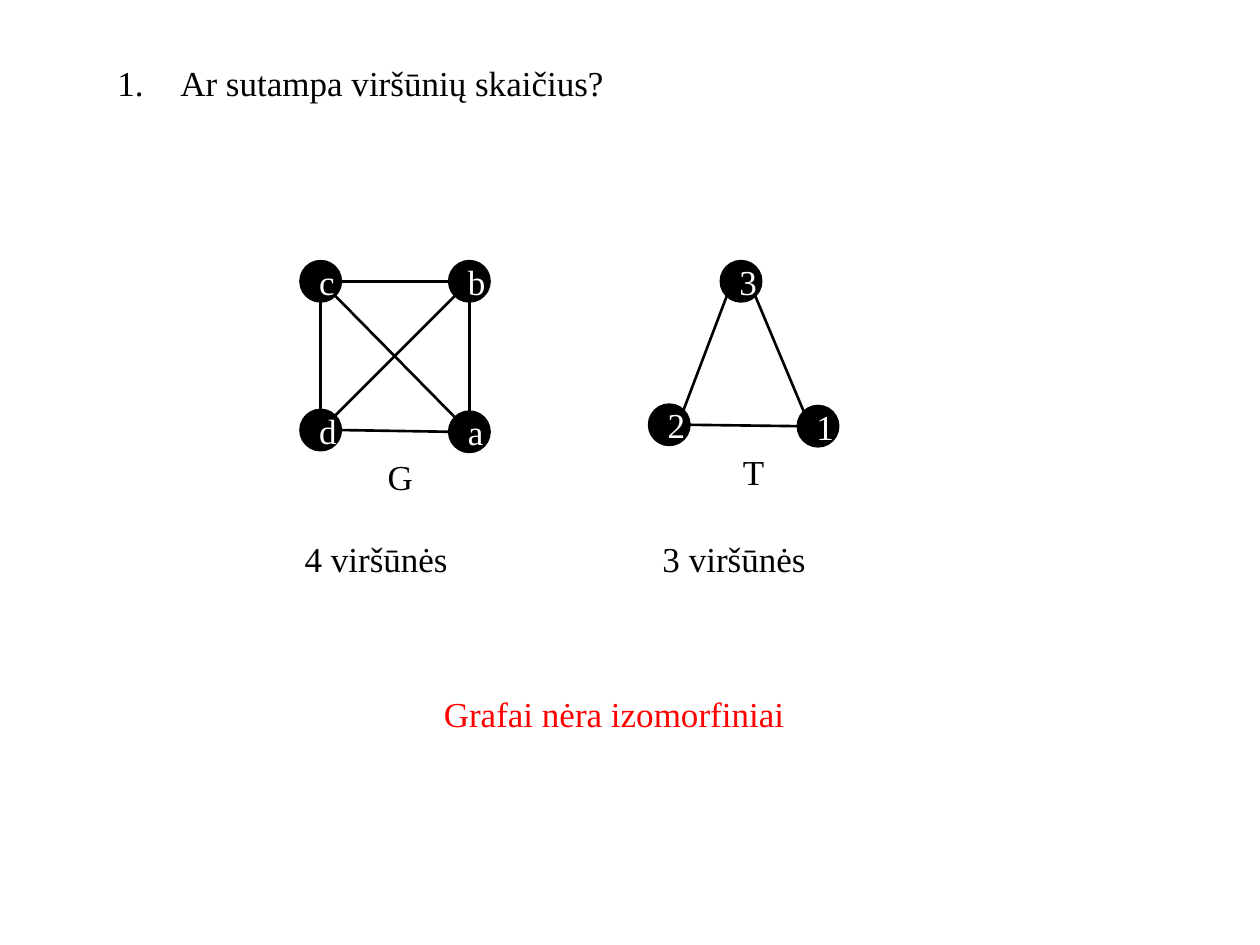
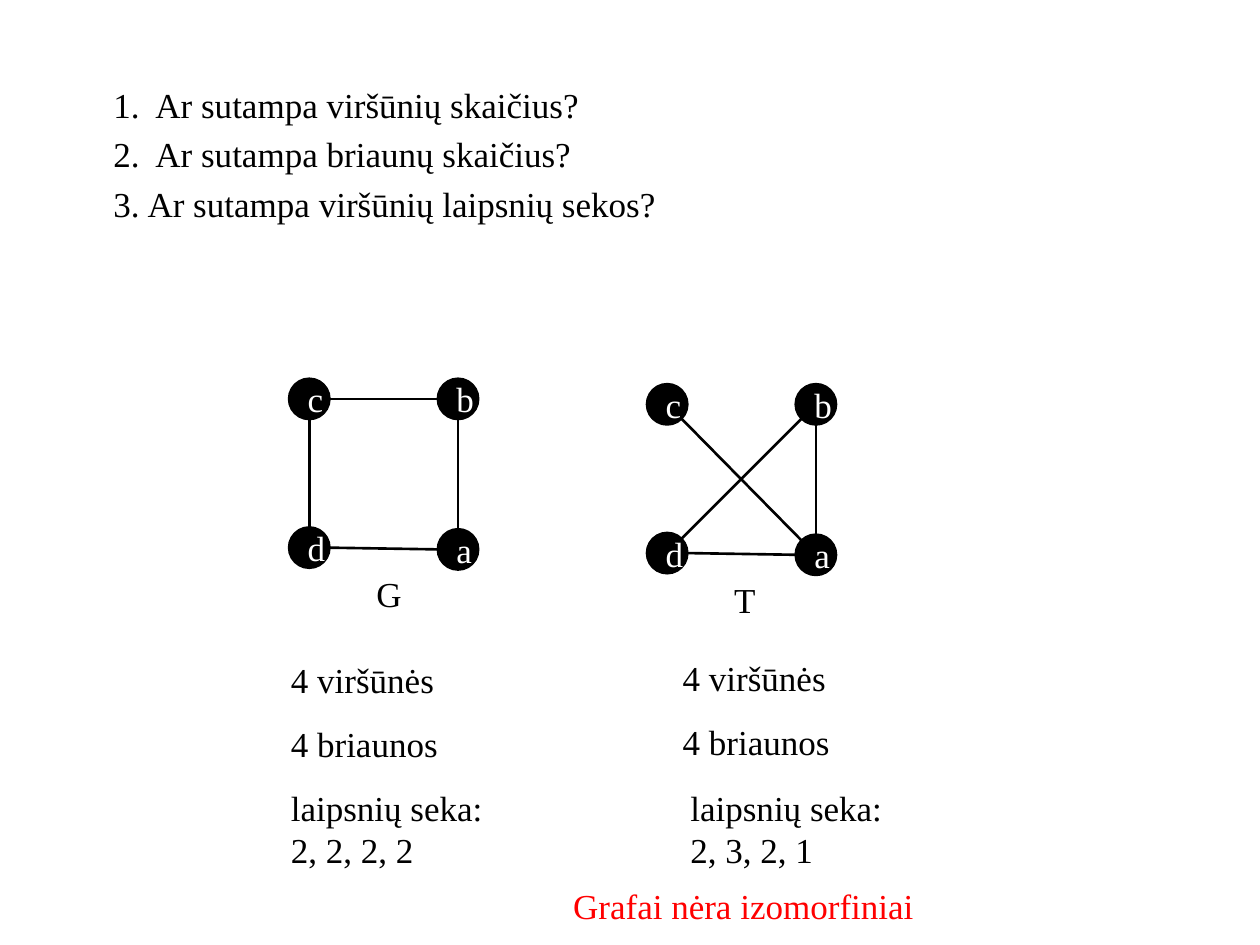
from math import atan2, cos, pi, sin

from lxml.etree import SubElement
from pptx import Presentation
from pptx.dml.color import RGBColor
from pptx.enum.shapes import MSO_CONNECTOR as CONN, MSO_SHAPE as SHAPE
from pptx.enum.text import MSO_ANCHOR as ANCHOR, MSO_AUTO_SIZE as FIT, PP_ALIGN as ALIGN
from pptx.oxml.ns import qn
from pptx.util import Pt

BLACK = RGBColor(0, 0, 0)
WHITE = RGBColor(255, 255, 255)
RED = RGBColor(255, 0, 0)
FONT = "Times New Roman"
TEXT = {"name": FONT, "size": Pt(20)}
LINE_H = 31.7
NODE = 22.5
STEP = 85
VERDICT = "Grafai nėra izomorfiniai"

SQUARE = {"c": (0, 0), "b": (STEP, 0), "d": (0, STEP), "a": (STEP, STEP + 1)}
TRIANGLE = {"3": (41, 0), "2": (0, 82), "1": (STEP, 82.8)}


def write(p, text, color=BLACK):
    r = p.add_run()
    r.text = text
    for name, value in TEXT.items():
        setattr(r.font, name, value)
    r.font.color.rgb = color


def add_text(shapes, text, left, top, width, height=LINE_H, color=BLACK):
    tf = shapes.add_textbox(Pt(left), Pt(top), Pt(width), Pt(height)).text_frame
    tf.word_wrap = True
    write(tf.paragraphs[0], text, color)


def add_questions(s, left, top, questions):
    """Fill the body placeholder with a numbered list of (text, indent) pairs."""
    body = s.placeholders[1]
    box = {"left": left, "top": top, "width": 623.5, "height": LINE_H * len(questions)}
    for name, value in box.items():
        setattr(body, name, Pt(value))
    tf = body.text_frame
    tf.auto_size = FIT.NONE
    tf.vertical_anchor = ANCHOR.TOP
    for number, (text, indent) in enumerate(questions, 1):
        p = tf.paragraphs[0] if number == 1 else tf.add_paragraph()
        p.space_before, p.space_after = Pt(0), Pt(4.4)
        pPr = p._p.get_or_add_pPr()
        pPr.set("marL", str(Pt(indent)))
        pPr.set("indent", str(-Pt(indent)))
        SubElement(pPr, qn("a:buFont"), typeface=FONT)
        SubElement(pPr, qn("a:buAutoNum"), type="arabicPeriod", startAt=str(number))
        write(p, text)


def add_node(shapes, name, left, top):
    node = shapes.add_shape(SHAPE.OVAL, Pt(left), Pt(top), Pt(NODE), Pt(NODE))
    node.shadow.inherit = False
    node.fill.solid()
    node.fill.fore_color.rgb = BLACK
    node.line.color.rgb = BLACK
    node.line.width = Pt(2)
    p = node.text_frame.paragraphs[0]
    p.alignment = ALIGN.CENTER
    write(p, name, WHITE)


def add_edge(shapes, start, end):
    """Join two node centres, touching each circle at its nearest eighth."""
    (x1, y1), (x2, y2) = start, end
    angle = round(atan2(y2 - y1, x2 - x1) / (pi / 4)) * pi / 4
    dx, dy = NODE / 2 * cos(angle), NODE / 2 * sin(angle)
    ends = x1 + dx, y1 + dy, x2 - dx, y2 - dy
    edge = shapes.add_connector(CONN.STRAIGHT, *map(Pt, ends))
    edge.line.color.rgb = BLACK
    edge.line.width = Pt(1.5)
    SubElement(edge._element.spPr, qn("a:effectLst"))


def add_graph(s, left, top, nodes, edges, label, label_at=(42.5, 107)):
    """Draw a labelled graph; each edge is a pair of node names."""
    shapes = s.shapes.add_group_shape().shapes
    centres = {}
    for name, (x, y) in nodes.items():
        add_node(shapes, name, left + x, top + y)
        centres[name] = left + x + NODE / 2, top + y + NODE / 2
    for start, end in edges:
        add_edge(shapes, centres[start], centres[end])
    x, y = label_at
    add_text(shapes, label, left + x, top + y, NODE)


def add_slide(prs):
    s = prs.slides.add_slide(prs.slide_layouts[1])
    title = s.shapes.title._element
    title.getparent().remove(title)
    return s


def add_counts(s, left, top, degrees, degrees_left):
    """Stack the vertex and edge counts above the degree sequence."""
    for row, text in enumerate(("4 viršūnės", "4 briaunos")):
        add_text(s.shapes, text, left, top + row * 36.5, 135.4)
    add_text(s.shapes, f"laipsnių seka: {degrees}", degrees_left, 445.7, 135.4, 55.4)


def vertex_slide(prs):
    s = add_slide(prs)
    add_questions(s, 59.8, 31.7, [("Ar sutampa viršūnių skaičius?", 36)])
    add_graph(s, 172, 149.5, SQUARE, ["cb", "da", "db", "ba", "ca", "cd"], "G")
    add_graph(s, 371.2, 149.5, TRIANGLE, ["32", "31", "12"], "T", (46.2, 104.5))
    add_text(s.shapes, "4 viršūnės", 167, 303.8, 112.3)
    add_text(s.shapes, "3 viršūnės", 371.5, 303.8, 112.3)
    add_text(s.shapes, VERDICT, 246.5, 392.4, 323.3, color=RED)


def degree_slide(prs):
    s = add_slide(prs)
    add_questions(s, 57.6, 43.9, [
        ("Ar sutampa viršūnių skaičius?", 24),
        ("Ar sutampa briaunų skaičius?", 24),
        ("Ar sutampa viršūnių laipsnių sekos?", 19.5),
    ])
    add_graph(s, 165.5, 216.7, SQUARE, ["cb", "da", "ba", "cd"], "G")
    add_graph(s, 370, 219.8, SQUARE, ["da", "ba", "ca", "bd"], "T")
    add_counts(s, 159.1, 373, "2, 2, 2, 2", 159.1)
    add_counts(s, 383, 371.5, "2, 3, 2, 1", 387.4)
    add_text(s.shapes, VERDICT, 320.4, 501.8, 323.3, color=RED)


def main():
    prs = Presentation()
    prs.slide_width, prs.slide_height = Pt(720), Pt(540)
    vertex_slide(prs)
    degree_slide(prs)
    prs.save("out.pptx")


if __name__ == "__main__":
    main()
